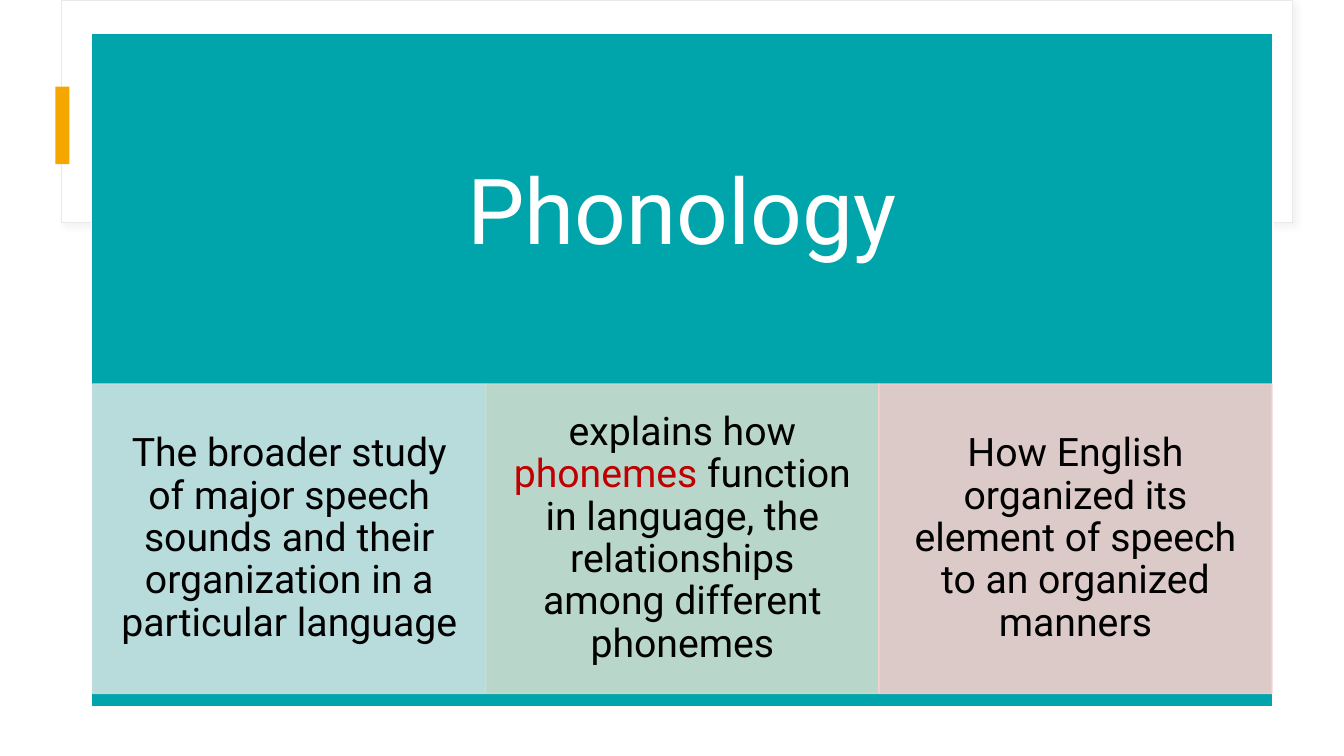
from lxml import etree
from pptx import Presentation
from pptx.dml.color import RGBColor
from pptx.enum import shapes, text
from pptx.oxml import ns
from pptx.util import Pt

# Content
TITLE = "Phonology"
BLACK = RGBColor(0x00, 0x00, 0x00)
WHITE = RGBColor(0xFF, 0xFF, 0xFF)
RED = RGBColor(0xC0, 0x00, 0x00)
TEAL = RGBColor(0x00, 0xA5, 0xAB)
AMBER = RGBColor(0xF5, 0xA7, 0x00)
GREY = RGBColor(0xE9, 0xE9, 0xE9)
PALE_BLUE = RGBColor(0xCC, 0xE1, 0xE2)
PALE_GREEN = RGBColor(0xCC, 0xDD, 0xCE)
PALE_PINK = RGBColor(0xF5, 0xCF, 0xCD)

COLUMNS = [
    (PALE_BLUE, [("The broader study of major speech sounds and their "
                  "organization in a particular language", BLACK)]),
    (PALE_GREEN, [("explains how ", BLACK), ("phonemes", RED),
                  (" function in language, the relationships among "
                   "different phonemes", BLACK)]),
    (PALE_PINK, [("How English organized its element of speech to an "
                  "organized manners", BLACK)]),
]

# Layout, in points
FRAME = (43.9, 0, 879.1, 159.1)
ACCENT = (39.6, 61.9, 10.1, 55.4)
PANEL = (65.5, 23.8, 843.8, 481)
HEADING = (*PANEL[:3], 259.9)
COLUMN_LEFT, COLUMN_TOP, COLUMN_WIDTH, COLUMN_HEIGHT = 66.2, 274.3, 280.8, 221


def add_box(s, at, fill, line=None, width=1, opacity=None):
    sp = s.shapes.add_shape(shapes.MSO_SHAPE.RECTANGLE, *map(Pt, at))
    sp.fill.solid()
    sp.fill.fore_color.rgb = fill
    if line is None:
        sp.line.fill.background()
    else:
        sp.line.color.rgb = line
        sp.line.width = Pt(width)
    sp.shadow.inherit = False
    if opacity is not None:
        for color in sp._element.spPr.iter(ns.qn("a:srgbClr")):
            etree.SubElement(color, ns.qn("a:alpha"), val=str(opacity * 1000))
    return sp


def add_shadow(sp):
    effects = sp._element.spPr.find(ns.qn("a:effectLst"))
    shadow = etree.SubElement(
        effects, ns.qn("a:outerShdw"), blurRad=str(Pt(4)), dist=str(Pt(3)),
        dir=str(45 * 60000), algn="tl", rotWithShape="0")
    color = etree.SubElement(shadow, ns.qn("a:srgbClr"), val="D9D9D9")
    etree.SubElement(color, ns.qn("a:alpha"), val="30000")


def write(sp, runs, size, inset_x, inset_y):
    tf = sp.text_frame
    frame_format = {
        "word_wrap": True,
        "vertical_anchor": text.MSO_ANCHOR.MIDDLE,
        "margin_left": Pt(inset_x), "margin_right": Pt(inset_x),
        "margin_top": Pt(inset_y), "margin_bottom": Pt(inset_y),
    }
    for name, value in frame_format.items():
        setattr(tf, name, value)
    p = tf.paragraphs[0]
    p.alignment = text.PP_ALIGN.CENTER
    p.line_spacing = 0.9
    for words, color in runs:
        r = p.add_run()
        r.text = words
        for name, value in {"name": "Roboto", "size": Pt(size)}.items():
            setattr(r.font, name, value)
        r.font.color.rgb = color


def main():
    prs = Presentation()
    prs.slide_width, prs.slide_height = Pt(960), Pt(540)
    s = prs.slides.add_slide(prs.slide_layouts[6])

    # Background frame and accent bar
    add_shadow(add_box(s, FRAME, WHITE, GREY, 0.75))
    add_box(s, ACCENT, AMBER)

    # Teal panel with heading
    add_box(s, PANEL, TEAL, WHITE)
    heading = s.shapes.add_textbox(*map(Pt, HEADING))
    write(heading, [(TITLE, WHITE)], 65, 36.7, 36.7)

    # Three equal columns
    for i, (fill, runs) in enumerate(COLUMNS):
        at = (COLUMN_LEFT + i * COLUMN_WIDTH, COLUMN_TOP,
              COLUMN_WIDTH, COLUMN_HEIGHT)
        write(add_box(s, at, fill, fill, opacity=90), runs, 28, 15.8, 2.9)

    prs.save("out.pptx")


if __name__ == "__main__":
    main()
